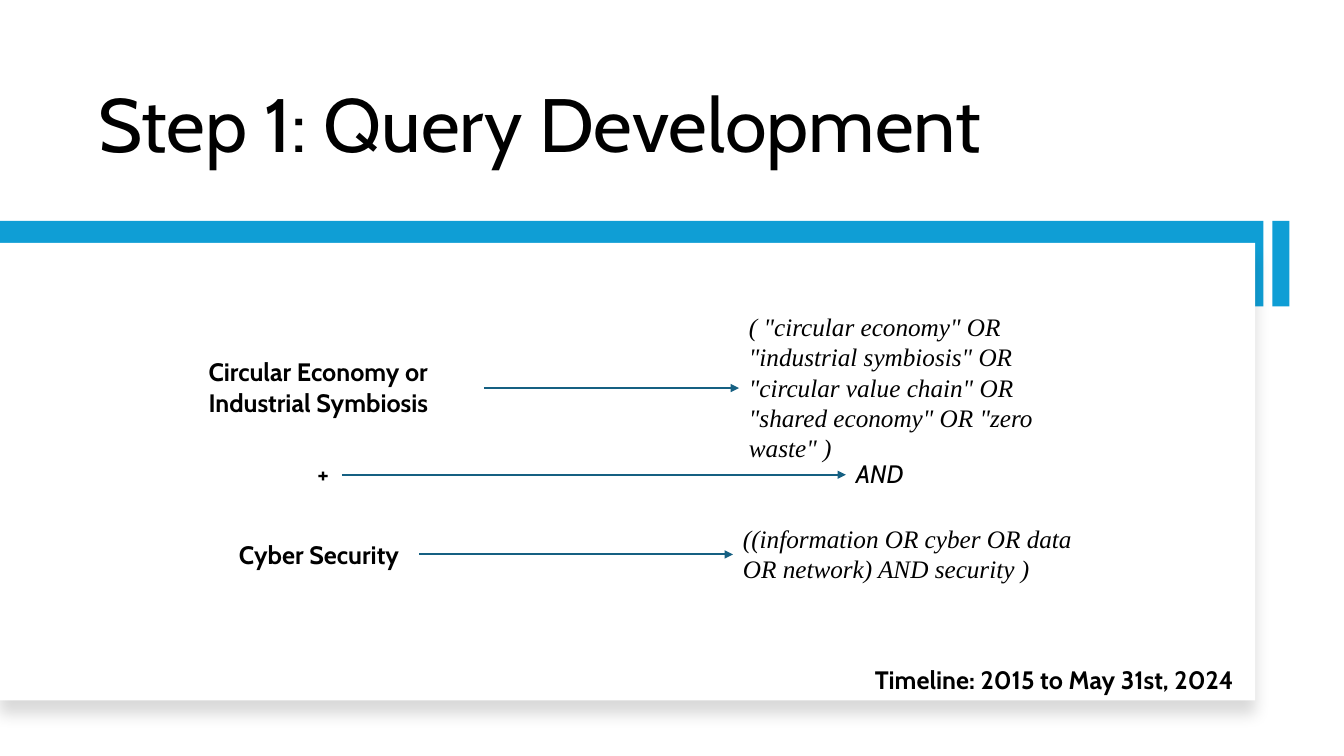
from lxml import etree
from pptx import Presentation
from pptx import util as u
from pptx.dml.color import RGBColor
from pptx.enum import shapes, text
from pptx.oxml import ns

PX = 9144
BLACK = RGBColor(0x00, 0x00, 0x00)
WHITE = RGBColor(0xFF, 0xFF, 0xFF)
BLUE = RGBColor(0x0F, 0x9E, 0xD5)
TEAL = RGBColor(0x15, 0x60, 0x82)
SANS = "Cabin"
SERIF = "Times New Roman"


class Deck:
    def __init__(self, width, height):
        self.prs = Presentation()
        self.prs.slide_width, self.prs.slide_height = self.px(width, height)
        self.s = self.prs.slides.add_slide(self.prs.slide_layouts[6])

    def px(self, *lengths):
        return [u.Emu(n * PX) for n in lengths]

    def rect(self, x, y, w, h, color):
        sp = self.s.shapes.add_shape(
            shapes.MSO_SHAPE.RECTANGLE, *self.px(x, y, w, h))
        sp.shadow.inherit = False
        sp.fill.solid()
        sp.fill.fore_color.rgb = color
        sp.line.fill.background()
        return sp

    def panel(self, x, y, w, h):
        sp = self.rect(x, y, w, h, WHITE)
        effects = sp.element.spPr.find(ns.qn("a:effectLst"))
        shadow = etree.SubElement(
            effects, ns.qn("a:outerShdw"), blurRad=str(u.Pt(11)),
            dist=str(u.Pt(10)), dir="5400000", algn="t", rotWithShape="0")
        color = etree.SubElement(shadow, ns.qn("a:srgbClr"), val=str(BLACK))
        etree.SubElement(color, ns.qn("a:alpha"), val="15000")

    def text(self, x, y, w, h, words, font=SANS, size=18, bold=False,
             italic=False, wrap=False):
        tf = self.s.shapes.add_textbox(*self.px(x, y, w, h)).text_frame
        tf.word_wrap = wrap
        p = tf.paragraphs[0]
        p.text = words
        p.font.name = font
        p.font.size = u.Pt(size)
        p.font.bold = bold
        p.font.italic = italic
        p.font.color.rgb = BLACK
        return tf

    def title(self, x, y, w, h, words):
        tf = self.text(x, y, w, h, words, size=54, wrap=True)
        tf.vertical_anchor = text.MSO_ANCHOR.BOTTOM
        tf.paragraphs[0].line_spacing = 0.9

    def arrow(self, x1, x2, y):
        c = self.s.shapes.add_connector(
            shapes.MSO_CONNECTOR.STRAIGHT, *self.px(x1, y, x2, y))
        c.line.color.rgb = TEAL
        c.line.width = u.Pt(1.5)
        props = c.element.spPr
        etree.SubElement(
            props.find(ns.qn("a:ln")), ns.qn("a:tailEnd"), type="triangle")
        etree.SubElement(props, ns.qn("a:effectLst"))


def main():
    deck = Deck(1333, 750)
    deck.title(88, 42, 1010, 130, "Step 1: Query Development")
    deck.rect(1262, 219, 17, 85, BLUE)
    deck.rect(0, 219, 1253, 85, BLUE)
    deck.panel(0, 241, 1245, 454)

    deck.text(197, 349, 283, 71, "Circular Economy or Industrial Symbiosis",
              bold=True, wrap=True)
    deck.text(305, 450, 34, 40, "+", bold=True)
    deck.text(227, 530, 189, 40, "Cyber Security", bold=True)

    deck.text(733, 304, 353, 162,
              '( "circular economy" OR "industrial symbiosis" OR '
              '"circular value chain" OR "shared economy" OR "zero waste" )',
              font=SERIF, italic=True, wrap=True)
    deck.text(839, 450, 70, 40, "AND", italic=True)
    deck.text(727, 514, 365, 71,
              "((information OR cyber OR data OR network) AND security )",
              font=SERIF, italic=True, wrap=True)

    for x1, x2, y in ((480, 733, 385), (339, 839, 471), (416, 727, 550)):
        deck.arrow(x1, x2, y)

    deck.text(858, 654, 387, 40, "Timeline: 2015 to May 31st, 2024", bold=True)
    deck.prs.save("out.pptx")


if __name__ == "__main__":
    main()
